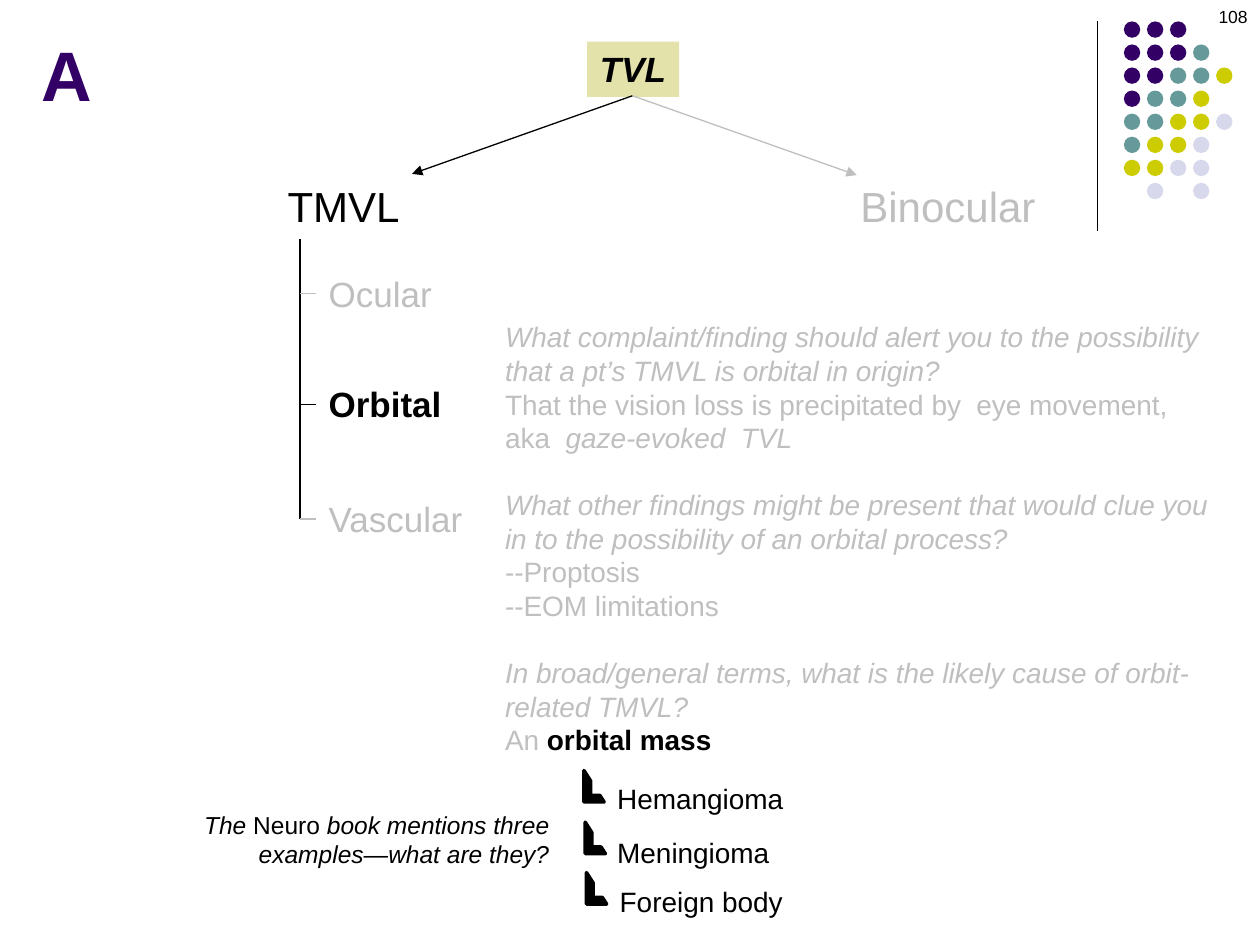
import dataclasses

import pptx
import pptx.dml.color
import pptx.enum.shapes
import pptx.enum.text
import pptx.oxml
import pptx.oxml.ns
import pptx.util
from pptx.util import Inches

SHAPES = pptx.enum.shapes.MSO_SHAPE
ALIGN = pptx.enum.text.PP_ALIGN


@dataclasses.dataclass(frozen=True)
class Theme:
    font: str = "Arial"
    ink: str = "000000"
    muted: str = "BFBFBF"
    paper: str = "FFFFFF"
    purple: str = "330066"
    teal: str = "669999"
    lime: str = "CCCC00"
    lavender: str = "D8D8EC"
    highlight: str = "E2E2AA"
    title_size: int = 40
    branch_size: int = 24
    label_size: int = 20
    body_size: int = 16
    note_size: int = 14
    number_size: int = 10
    line_width: float = 0.75
    gap: float = 19.2


THEME = Theme()


def rgb(value):
    return pptx.dml.color.RGBColor.from_string(value)


def write_text(shape, content, size, color=THEME.ink, bold=False, italic=False,
               align=ALIGN.LEFT, wrap=False, gaps_before=()):
    frame = shape.text_frame
    frame.word_wrap = wrap
    frame.vertical_anchor = pptx.enum.text.MSO_ANCHOR.TOP
    frame.margin_left = frame.margin_right = Inches(0.1)
    frame.margin_top = frame.margin_bottom = Inches(0.05)
    paragraphs = [[(content, {})]] if isinstance(content, str) else content
    for index, runs in enumerate(paragraphs):
        paragraph = frame.paragraphs[0] if index == 0 else frame.add_paragraph()
        paragraph.alignment = align
        if index in gaps_before:
            paragraph.space_before = pptx.util.Pt(THEME.gap)
        for text, changes in runs:
            run = paragraph.add_run()
            run.text = text
            run.font.name = THEME.font
            run.font.size = pptx.util.Pt(size)
            run.font.bold = changes.get("bold", bold)
            run.font.italic = changes.get("italic", italic)
            run.font.color.rgb = rgb(changes.get("color", color))


def add_text(slide, box, content, size, fill=None, **text_format):
    shape = slide.shapes.add_textbox(*map(Inches, box))
    if fill:
        shape.fill.solid()
        shape.fill.fore_color.rgb = rgb(fill)
    write_text(shape, content, size, **text_format)


def add_figure(shapes, kind, box, fill, outline=None):
    shape = shapes.add_shape(kind, *map(Inches, box))
    shape.shadow.inherit = False
    shape.fill.solid()
    shape.fill.fore_color.rgb = rgb(fill)
    if outline:
        shape.line.color.rgb = rgb(fill)
        shape.line.width = pptx.util.Pt(outline)
    else:
        shape.line.fill.background()
    return shape


def add_line(slide, start, end, color=THEME.ink, arrow=False):
    connector = slide.shapes.add_connector(
        pptx.enum.shapes.MSO_CONNECTOR.STRAIGHT, *map(Inches, (*start, *end)))
    connector.line.color.rgb = rgb(color)
    connector.line.width = pptx.util.Pt(THEME.line_width)
    if arrow:
        line = connector.line._get_or_add_ln()
        head = pptx.oxml.parse_xml(
            f'<a:tailEnd {pptx.oxml.ns.nsdecls("a")} type="triangle"/>')
        line.append(head)
    properties = connector._element.spPr
    properties.append(pptx.oxml.parse_xml(
        f'<a:effectLst {pptx.oxml.ns.nsdecls("a")}/>'))


def add_dot_ornament(slide, left, top):
    add_line(slide, (left, top), (left, top + 1.66))
    colors = {"P": THEME.purple, "T": THEME.teal,
              "L": THEME.lime, "V": THEME.lavender}
    rows = ("PPP", "PPPT", "PPTTL", "PTTL", "TTLLV", "TLLV", "LLVV", " V V")
    group = slide.shapes.add_group_shape()
    pitch, diameter = 0.183, 0.13
    for row, letters in enumerate(rows):
        for column, letter in enumerate(letters):
            if letter in colors:
                box = (left + 0.21 + column * pitch, top + row * pitch,
                       diameter, diameter)
                add_figure(group.shapes, SHAPES.OVAL, box, colors[letter])


def add_title(slide, box):
    title = slide.shapes.title
    title.left, title.top, title.width, title.height = map(Inches, box)
    write_text(title, "A", THEME.title_size, color=THEME.purple, bold=True)


def add_branches(slide, left, top):
    root = (left + 2.85, top + 0.43)
    add_text(slide, (left + 2.49, top, 0.73, 0.44), "TVL", THEME.label_size,
             fill=THEME.highlight, bold=True, italic=True, align=ALIGN.CENTER)
    add_line(slide, root, (left + 1.1, top + 1.05), arrow=True)
    add_line(slide, root, (left + 4.63, top + 1.06), THEME.muted, arrow=True)
    add_text(slide, (left, top + 1.05, 1.1, 0.5), "TMVL", THEME.branch_size,
             align=ALIGN.RIGHT)
    add_text(slide, (left + 4.56, top + 1.05, 1.61, 0.5), "Binocular",
             THEME.branch_size, color=THEME.muted)


def add_origin_tree(slide, left, top, height):
    add_line(slide, (left, top), (left, top + height))
    origins = (("Ocular", 0.43, 1.03, False),
               ("Orbital", 1.31, 1.1, True),
               ("Vascular", 2.22, 1.27, False))
    for name, offset, width, active in origins:
        color = THEME.ink if active else THEME.muted
        middle = top + offset
        add_line(slide, (left, middle), (left + 0.24, middle), color)
        add_text(slide, (left + 0.13, middle - 0.22, width, 0.44), name,
                 THEME.label_size, fill=THEME.paper, color=color, bold=active)


def add_discussion(slide, box):
    question = {"italic": True}
    content = (
        [("What complaint/finding should alert you to the possibility that "
          "a pt’s TMVL is orbital in origin?", question)],
        [("That the vision loss is precipitated by  eye movement, aka  ", {}),
         ("gaze-evoked  TVL", question)],
        [("What other findings might be present that would clue you in to "
          "the possibility of an orbital process?", question)],
        [("--Proptosis", {})],
        [("--EOM limitations", {})],
        [("In broad/general terms, what is the likely cause of "
          "orbit-related TMVL?", question)],
        [("An ", {}), ("orbital mass", {"color": THEME.ink, "bold": True})],
    )
    add_text(slide, box, content, THEME.body_size, color=THEME.muted,
             wrap=True, gaps_before=(2, 5))


def add_examples(slide, left, top):
    note = [[("The ", {}), ("Neuro", {"italic": False}),
             (" book mentions three examples—what are they?", {})]]
    add_text(slide, (left, top + 0.23, 2.95, 0.57), note, THEME.note_size,
             italic=True, align=ALIGN.RIGHT, wrap=True)
    examples = (("Hemangioma", 3.29, 0, 1.53, 3.08, 0.01),
                ("Meningioma", 3.29, 0.43, 1.42, 3.09, 0.42),
                ("Foreign body", 3.31, 0.82, 1.51, 3.1, 0.82))
    for name, text_x, text_y, width, mark_x, mark_y in examples:
        add_text(slide, (left + text_x, top + text_y, width, 0.37), name,
                 THEME.body_size)
        mark = add_figure(slide.shapes, SHAPES.HALF_FRAME,
                          (left + mark_x, top + mark_y, 0.25, 0.16),
                          THEME.ink, outline=2)
        mark.rotation = 270


def main():
    presentation = pptx.Presentation()
    presentation.slide_width = Inches(10)
    presentation.slide_height = Inches(7.5)
    slide = presentation.slides.add_slide(presentation.slide_layouts[5])
    add_dot_ornament(slide, 8.71, 0.17)
    add_origin_tree(slide, 2.38, 1.9, 2.22)
    add_text(slide, (7.67, 0, 2.33, 0.5), "108", THEME.number_size,
             align=ALIGN.RIGHT, wrap=True)
    add_branches(slide, 2.17, 0.33)
    add_title(slide, (0.23, 0.2, 0.61, 0.77))
    add_discussion(slide, (3.91, 2.49, 5.82, 3.6))
    add_examples(slide, 1.51, 6.15)
    presentation.save("out.pptx")


if __name__ == "__main__":
    main()
